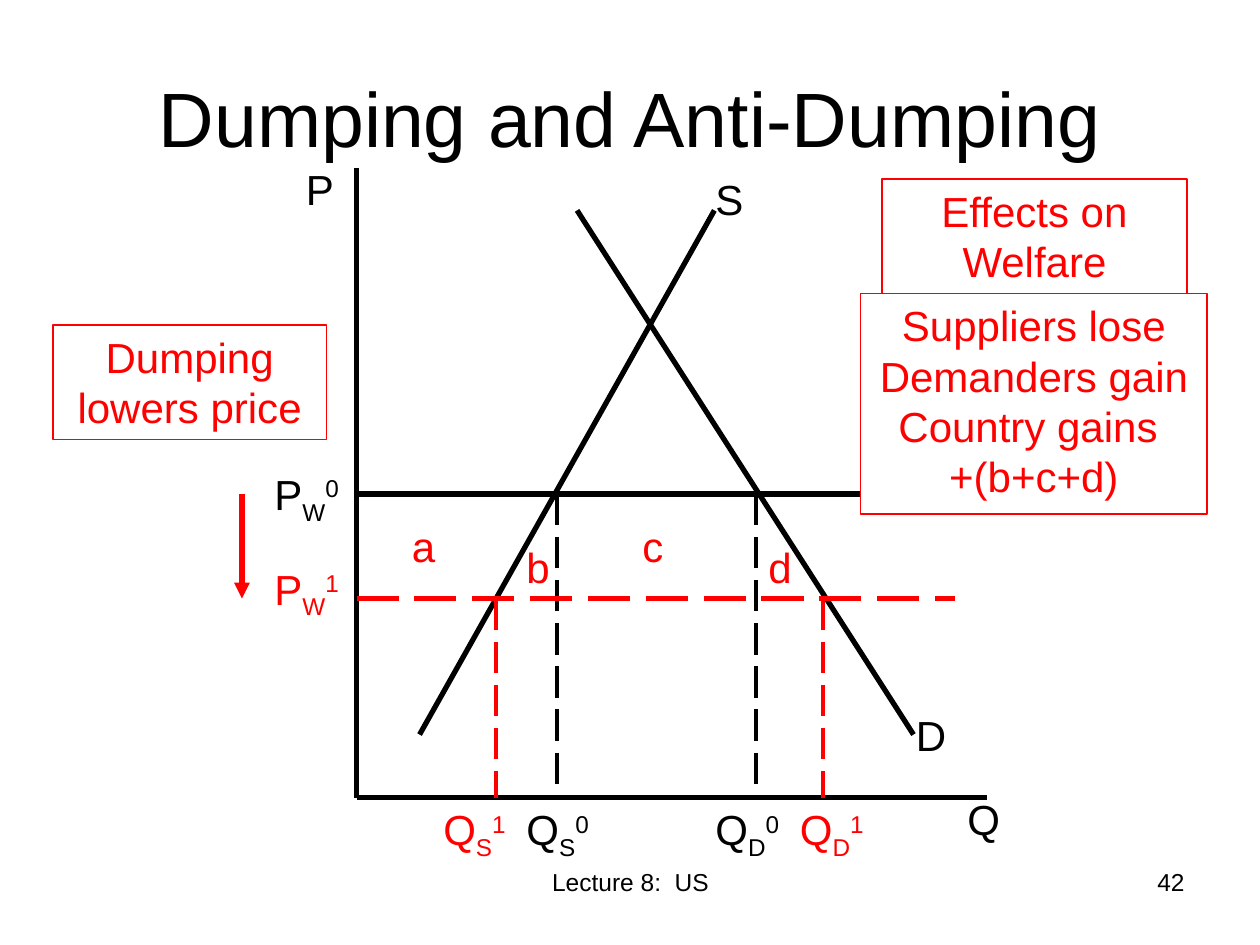
"""Build a supply and demand slide on dumping and its welfare effects."""
import pptx
import pptx.dml.color
import pptx.enum.dml
import pptx.enum.shapes
import pptx.enum.text
import pptx.oxml
import pptx.oxml.ns
import pptx.util

Inches = pptx.util.Inches
Pt = pptx.util.Pt
Align = pptx.enum.text.PP_ALIGN
Dash = pptx.enum.dml.MSO_LINE.LONG_DASH

THEME = {
    "font": "Arial", "ink": "000000", "red": "FF0000", "paper": "FFFFFF",
    "title": 44, "body": 24, "foot": 14, "bold": 3, "thin": 2.25, "edge": 0.75,
}
TITLE = "Dumping and Anti-Dumping"
LEFT, BASE, OLD, NEW = 2.83, 6.33, 3.92, 4.75
TOP, LOW, END = 1.67, 5.83, 7.58

SOLID = [
    ((LEFT, 1.33), (LEFT, BASE)),
    ((LEFT, BASE), (7.83, BASE)),
    ((5.67, TOP), (3.33, LOW)),
    ((4.58, TOP), (7.25, LOW)),
    ((LEFT, OLD), (END, OLD)),
]
DROPS = [(3.94, NEW, "red"), (6.53, NEW, "red"), (4.42, OLD, "ink"), (6, OLD, "ink")]
FEET = [
    ("Lecture 8:  US", 3.42, 3.17, Align.CENTER),
    ("42", 7.17, 2.33, Align.RIGHT),
]
LABELS = [
    (("S",), 5.58, 1.33, "ink"), (("D",), 7.17, 5.58, "ink"),
    (("P",), 2.33, 1.25, "ink"), (("Q",), 7.58, 6.25, "ink"),
    (("P", "W", "0"), 2.08, 3.67, "ink"), (("P", "W", "1"), 2.08, 4.42, "red"),
    (("Q", "S", "0"), 4.08, BASE, "ink"), (("Q", "S", "1"), 3.42, BASE, "red"),
    (("Q", "D", "0"), 5.58, BASE, "ink"), (("Q", "D", "1"), 6.25, BASE, "red"),
    (("a",), 3.17, 4.08, "red"), (("b",), 4.08, 4.25, "red"),
    (("c",), 5, 4.08, "red"), (("d",), 6, 4.25, "red"),
]
BOXES = [
    (["Effects on Welfare"], (7, 1.42, 2.42, 0.91), None, True),
    (["Suppliers lose Demanders gain Country gains ", "+(b+c+d)"],
     (6.83, 2.33, 2.75, 1.75), "paper", False),
    (["Dumping lowers price"], (0.42, 2.58, 2.17, 0.91), None, True),
]
SHIFTS = (None, "-25000", "30000")


def tint(name):
    return pptx.dml.color.RGBColor.from_string(THEME[name])


def node(tag, **attrs):
    item = pptx.oxml.parse_xml(f"<a:{tag} {pptx.oxml.ns.nsdecls('a')}/>")
    for key, value in attrs.items():
        item.set(key, value)
    return item


def style(para, size, color, align=Align.LEFT):
    para.alignment = align
    para.font.name = THEME["font"]
    para.font.size = Pt(THEME[size])
    para.font.color.rgb = tint(color)


def space(para):
    gap = node("spcBef")
    gap.append(node("spcPct", val="50000"))
    para._p.get_or_add_pPr().insert(0, gap)


def rule(slide, start, end, color="ink", width="bold", dash=None, arrow=False):
    line = slide.shapes.add_connector(
        pptx.enum.shapes.MSO_CONNECTOR.STRAIGHT, *map(Inches, start + end))
    line.line.color.rgb = tint(color)
    line.line.width = Pt(THEME[width])
    if dash:
        line.line.dash_style = dash
    if arrow:
        line.line._get_or_add_ln().append(node("tailEnd", type="triangle"))
    line._element.spPr.append(node("effectLst"))


def write(slide, parts, place, size, color, align=Align.LEFT):
    frame = slide.shapes.add_textbox(*map(Inches, place)).text_frame
    frame.word_wrap = True
    para = frame.paragraphs[0]
    for text, shift in zip(parts, SHIFTS):
        run = para.add_run()
        run.text = text
        if shift:
            run._r.get_or_add_rPr().set("baseline", shift)
    style(para, size, color, align)
    return para


def panel(slide, lines, place, fill, gap):
    box = slide.shapes.add_shape(
        pptx.enum.shapes.MSO_SHAPE.RECTANGLE, *map(Inches, place))
    box.shadow.inherit = False
    if fill:
        box.fill.solid()
        box.fill.fore_color.rgb = tint(fill)
    else:
        box.fill.background()
    box.line.color.rgb = tint("red")
    box.line.width = Pt(THEME["edge"])
    frame = box.text_frame
    frame.word_wrap = True
    frame.vertical_anchor = pptx.enum.text.MSO_ANCHOR.TOP
    frame.text = "\n".join(lines)
    for para in frame.paragraphs:
        style(para, "body", "red", Align.CENTER)
        if gap:
            space(para)


def main():
    deck = pptx.Presentation()
    deck.slide_width, deck.slide_height = Inches(10), Inches(7.5)
    slide = deck.slides.add_slide(deck.slide_layouts[5])
    title = slide.shapes.title
    title.left, title.top, title.width, title.height = map(Inches, (0.5, 0.3, 9, 1.25))
    title.text_frame.text = TITLE
    title.text_frame.vertical_anchor = pptx.enum.text.MSO_ANCHOR.MIDDLE
    style(title.text_frame.paragraphs[0], "title", "ink", Align.CENTER)
    for text, left, width, align in FEET:
        write(slide, [text], (left, 6.83, width, 0.52), "foot", "ink", align)
    for start, end in SOLID:
        rule(slide, start, end)
    for x, top, color in DROPS:
        rule(slide, (x, top), (x, BASE), color, "thin", Dash)
    rule(slide, (LEFT, NEW), (END, NEW), "red", dash=Dash)
    for parts, left, top, color in LABELS:
        width = 0.83 if len(parts) > 1 else 0.58
        space(write(slide, parts, (left, top, width, 0.5), "body", color))
    for box in BOXES:
        panel(slide, *box)
    rule(slide, (1.92, OLD), (1.92, NEW), "red", arrow=True)
    deck.save("out.pptx")


if __name__ == "__main__":
    main()
